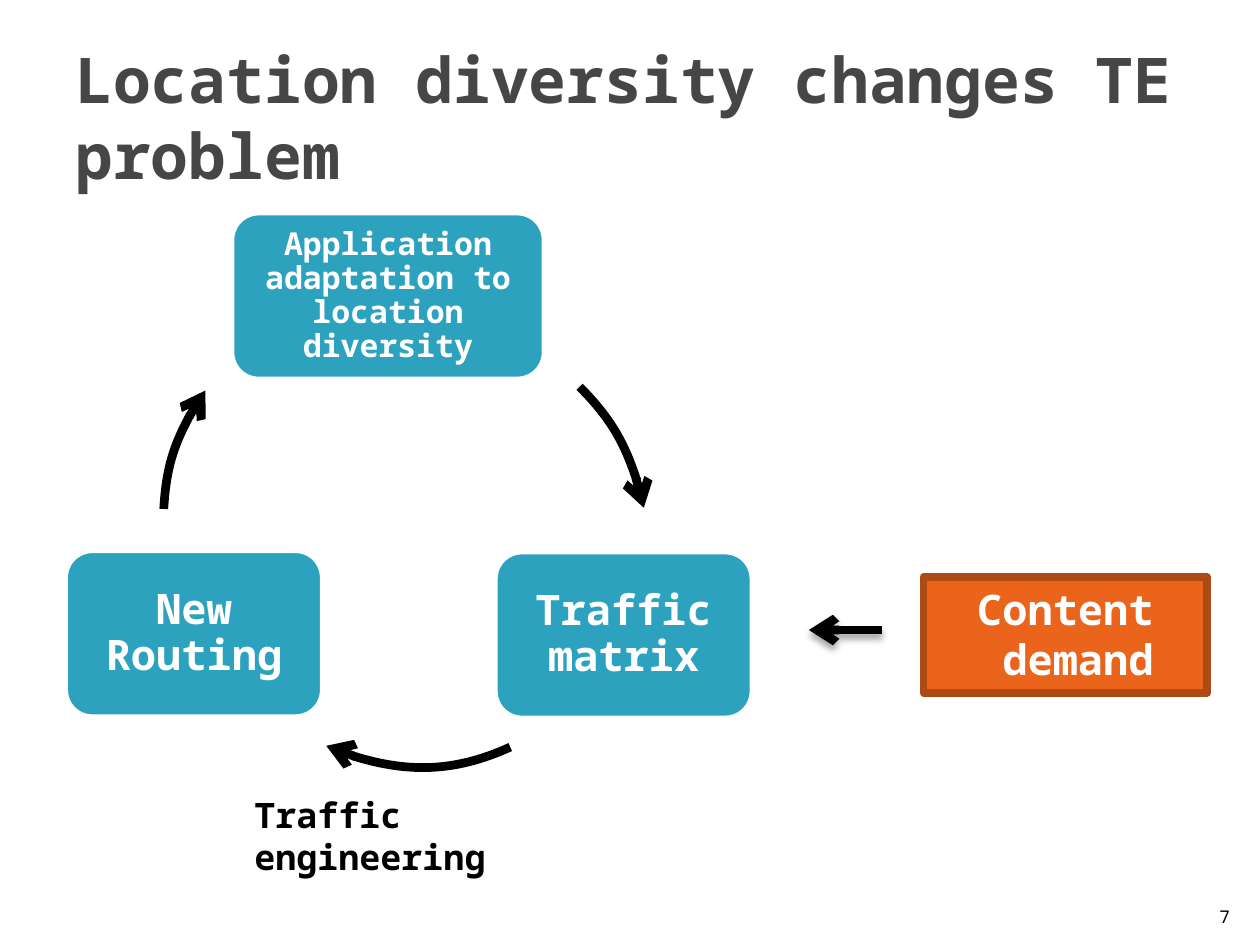
from lxml.etree import SubElement
from pptx import Presentation
from pptx.dml.color import RGBColor
from pptx.enum.shapes import MSO_CONNECTOR, MSO_SHAPE
from pptx.enum.text import MSO_ANCHOR, MSO_AUTO_SIZE, PP_ALIGN
from pptx.oxml.ns import qn
from pptx.util import Inches, Pt

FONT = "Noto Sans Mono"
BLACK, WHITE, GREY = "000000", "FFFFFF", "464646"
TEAL, ORANGE, RUST = "2DA2BF", "EB641B", "AE4A14"
STEP_HEIGHT = 1.34
CYCLE_SIZE = 3.57
OUTLINE = 4.33


def color(value):
    return RGBColor.from_string(value)


def write(shape, lines, size, ink, bold=True, align=PP_ALIGN.LEFT,
          anchor=MSO_ANCHOR.TOP, spacing=None, inset=None):
    frame = shape.text_frame
    frame.word_wrap = True
    frame.vertical_anchor = anchor
    if inset is not None:
        frame.margin_left = frame.margin_right = Inches(inset)
        frame.margin_top = frame.margin_bottom = Inches(inset)
    for index, line in enumerate(lines):
        paragraph = frame.add_paragraph() if index else frame.paragraphs[0]
        paragraph.text = line
        paragraph.alignment = align
        paragraph.line_spacing = spacing
        font = paragraph.font
        font.name, font.size, font.bold = FONT, Pt(size), bold
        font.color.rgb = color(ink)


def add_label(page, area, text, size, ink, **style):
    box = page.shapes.add_textbox(*map(Inches, area))
    write(box, [text], size, ink, **style)
    return box


def add_block(page, kind, area, fill, outline):
    block = page.shapes.add_shape(kind, *map(Inches, area))
    block.shadow.inherit = False
    block.fill.solid()
    block.fill.fore_color.rgb = color(fill)
    block.line.color.rgb = color(outline)
    block.line.width = Pt(OUTLINE)
    return block


def add_step(page, left, top, width, text, size, inset):
    area = (left, top, width, STEP_HEIGHT)
    step = add_block(page, MSO_SHAPE.ROUNDED_RECTANGLE, area, TEAL, WHITE)
    write(step, [text], size, WHITE, align=PP_ALIGN.CENTER,
          anchor=MSO_ANCHOR.MIDDLE, spacing=0.9, inset=inset)


def style_arrow(line):
    line.color.rgb = color(BLACK)
    line.width = Pt(5)
    SubElement(line._get_or_add_ln(), qn("a:tailEnd"), type="arrow")


def add_curved_arrow(page, corner, *curve):
    opposite = [value + CYCLE_SIZE for value in corner]
    near, far, start, *bends = [
        (Inches(x), Inches(y)) for x, y in (corner, opposite, *curve)]
    builder = page.shapes.build_freeform(*near)
    builder.move_to(*far)
    builder.move_to(*start)
    builder.add_line_segments(bends, close=False)
    arrow = builder.convert_to_shape()
    arrow.shadow.inherit = False
    arrow.fill.background()
    style_arrow(arrow.line)
    outline = next(arrow._element.iter(qn("a:moveTo"))).getparent()
    for frame_corner in outline.findall(qn("a:moveTo"))[:2]:
        outline.remove(frame_corner)
    bezier = SubElement(outline, qn("a:cubicBezTo"))
    for segment in outline.findall(qn("a:lnTo")):
        bezier.append(segment[0])
        outline.remove(segment)


def add_straight_arrow(page, start, end):
    arrow = page.shapes.add_connector(
        MSO_CONNECTOR.STRAIGHT, *map(Inches, start + end))
    style_arrow(arrow.line)
    effects = SubElement(arrow._element.spPr, qn("a:effectLst"))
    shadow = SubElement(effects, qn("a:outerShdw"), blurRad=str(Pt(4)),
                        dist=str(Pt(3)), dir="5400000", rotWithShape="0")
    tint = SubElement(shadow, qn("a:srgbClr"), val=BLACK)
    SubElement(tint, qn("a:alpha"), val="35000")


def main():
    deck = Presentation()
    deck.slide_width, deck.slide_height = Inches(10), Inches(7.5)
    page = deck.slides.add_slide(deck.slide_layouts[6])

    add_label(page, (0.5, 0.3, 9, 1.25), "Location diversity changes TE problem",
              36, GREY, anchor=MSO_ANCHOR.MIDDLE)

    add_step(page, 1.83, 1.68, 2.5,
             "Application adaptation to location diversity", 18, 0)
    add_curved_arrow(page, (1.57, 2.57),
                     (4.6, 3.07), (4.86, 3.33), (5.04, 3.67), (5.11, 4.03))
    add_step(page, 3.92, 4.37, 2.06, "Traffic matrix", 24, 0.04)
    add_curved_arrow(page, (1.55, 2.51),
                     (4.05, 5.93), (3.59, 6.14), (3.06, 6.13), (2.59, 5.92))
    add_step(page, 0.51, 4.36, 2.06, "New Routing", 24, 0.04)
    add_curved_arrow(page, (1.3, 2.35),
                     (1.3, 4.04), (1.32, 3.7), (1.43, 3.38), (1.63, 3.1))

    caption = add_label(page, (1.92, 6.25, 3.25, 0.44), "Traffic engineering",
                        20, BLACK)
    caption.text_frame.auto_size = MSO_AUTO_SIZE.SHAPE_TO_FIT_TEXT

    demand = add_block(page, MSO_SHAPE.RECTANGLE, (7.33, 4.58, 2.25, 0.92),
                       ORANGE, RUST)
    write(demand, ["Content", " demand"], 24, WHITE, align=PP_ALIGN.CENTER)
    add_straight_arrow(page, (7, 5), (6.42, 5))

    add_label(page, (9.46, 7.01, 0.4, 0.4), "7", 10, BLACK, bold=False,
              align=PP_ALIGN.RIGHT, anchor=MSO_ANCHOR.BOTTOM)
    deck.save("out.pptx")


if __name__ == "__main__":
    main()
